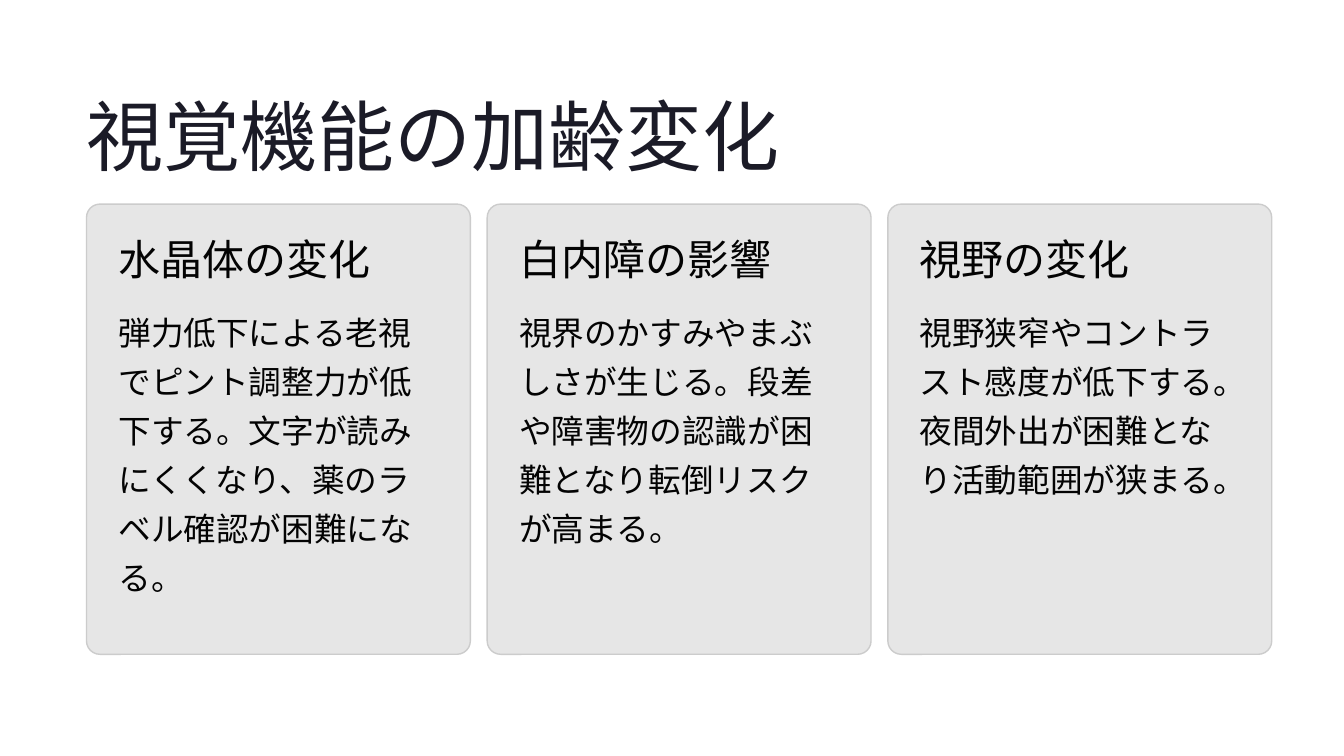
from pptx import Presentation
from pptx.dml.color import RGBColor
from pptx.enum.shapes import MSO_SHAPE
from pptx.util import Inches, Pt

ROUNDED = MSO_SHAPE.ROUNDED_RECTANGLE

LEFT, CARD_TOP = 1.03, 2.43
CARD_W, CARD_H, GAP = 4.57, 5.36, 0.2
PAD = 0.38

TITLE = {"size": Pt(66), "name": "Inter", "color": "1B1B27", "leading": Pt(82.5)}
HEADING = {"size": Pt(36), "name": "Inter", "color": "030303", "leading": Pt(41)}
BODY = {"size": Pt(28), "name": "Lato", "color": "030303", "leading": Pt(42)}

CARDS = [
    ("水晶体の変化",
     "弾力低下による老視でピント調整力が低下する。文字が読みにくくなり、薬のラベル確認が困難になる。", 3.72),
    ("白内障の影響",
     "視界のかすみやまぶしさが生じる。段差や障害物の認識が困難となり転倒リスクが高まる。", 3.1),
    ("視野の変化",
     "視野狭窄やコントラスト感度が低下する。夜間外出が困難となり活動範囲が狭まる。", 3.1),
]


def rgb(value):
    return RGBColor.from_string(value)


def add_text(text, left, top, width, height, style):
    """Add a text box without margins, sized in inches."""
    box = slide.shapes.add_textbox(*map(Inches, (left, top, width, height)))
    tf = box.text_frame
    tf.word_wrap = True
    for side in ("left", "top", "right", "bottom"):
        setattr(tf, f"margin_{side}", 0)
    p = tf.paragraphs[0]
    p.line_spacing = style["leading"]
    r = p.add_run()
    r.text = text
    for key in ("size", "name"):
        setattr(r.font, key, style[key])
    r.font.color.rgb = rgb(style["color"])


prs = Presentation()
prs.slide_width, prs.slide_height = Inches(16), Inches(9)
slide = prs.slides.add_slide(prs.slide_layouts[6])

add_text("視覚機能の加齢変化", LEFT, 1.01, 9.2, 1.15, TITLE)

for col, (heading, body, body_h) in enumerate(CARDS):
    x = LEFT + col * (CARD_W + GAP)
    card = slide.shapes.add_shape(
        ROUNDED, *map(Inches, (x, CARD_TOP, CARD_W, CARD_H)))
    card.adjustments[0] = 0.035
    card.shadow.inherit = False
    card.fill.solid()
    card.fill.fore_color.rgb = rgb("E6E6E6")
    card.line.color.rgb = rgb("CCCCCC")
    card.line.width = Pt(1.2)

    text_w = CARD_W - 2 * PAD - 0.04
    add_text(heading, x + PAD, CARD_TOP + PAD, text_w, 0.6, HEADING)
    add_text(body, x + PAD, CARD_TOP + PAD + 0.8, text_w, body_h, BODY)

prs.save("out.pptx")
